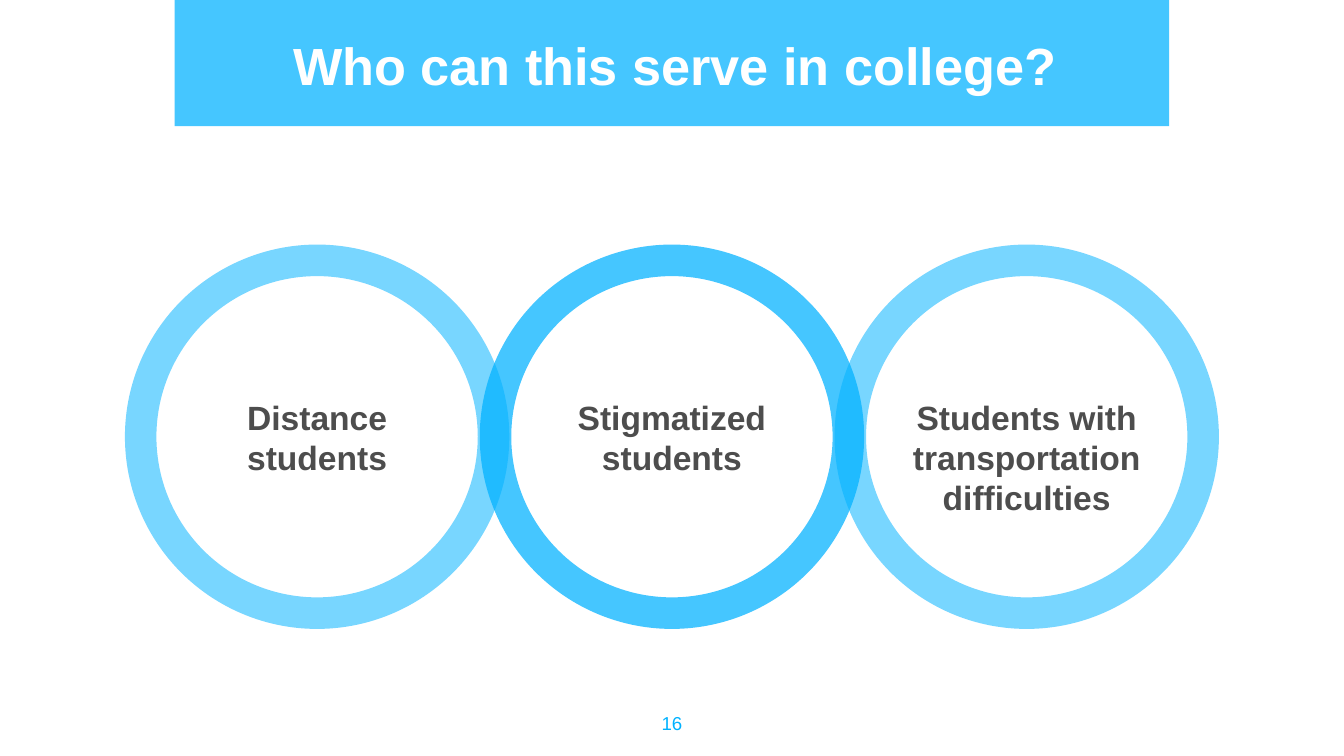
from lxml import etree
from pptx import Presentation
from pptx import util as u
from pptx.dml.color import RGBColor
from pptx.enum import shapes, text
from pptx.oxml.ns import qn

PX = 4572  # EMU in one px, 200 px to the inch
BLUE, WHITE, GREY = "00B2FF", "FFFFFF", "4D4D4D"
RING_SIZE, RING_STEP = 572, 528
INSET = 20


def px(*lengths):
    return [u.Emu(length * PX) for length in lengths]


def color(hex_string):
    return RGBColor.from_string(hex_string)


def add_filled_shape(slide, kind, box, opacity):
    """Add a borderless blue shape with the given opacity in percent."""
    shape = slide.shapes.add_shape(kind, *px(*box))
    shape.shadow.inherit = False
    shape.line.fill.background()
    shape.fill.solid()
    shape.fill.fore_color.rgb = color(BLUE)
    fill_color = shape.fill._xPr.find(qn("a:solidFill"))[0]
    etree.SubElement(fill_color, qn("a:alpha"), val=str(opacity * 1000))
    return shape


def write_text(shape, words, size, hex_string, bold=True, top_inset=INSET,
               anchor=text.MSO_ANCHOR.TOP):
    frame = shape.text_frame
    frame.word_wrap = True
    frame.auto_size = text.MSO_AUTO_SIZE.NONE
    frame.vertical_anchor = anchor
    frame.margin_left, frame.margin_top, frame.margin_right, frame.margin_bottom = px(
        INSET, top_inset, INSET, INSET)
    paragraph = frame.paragraphs[0]
    paragraph.alignment = text.PP_ALIGN.CENTER
    paragraph.line_spacing = 1.0
    paragraph.space_before = u.Pt(0)
    run = paragraph.add_run()
    run.text = words
    run.font.name = "Arial"
    run.font.size = u.Pt(size)
    run.font.bold = bold
    run.font.color.rgb = color(hex_string)


def add_header(slide, left, top, width, height):
    # Banner, moved behind the title placeholder
    banner = add_filled_shape(slide, shapes.MSO_SHAPE.RECTANGLE,
                              (left, top, width, height), 73)
    title = slide.shapes.title
    title._element.addprevious(banner._element)
    title.left, title.top, title.width, title.height = px(left + 4, top + 30, width, 110)
    write_text(title, "Who can this serve in college?", 28, WHITE)


def add_rings(slide, left, top):
    # Middle ring lies at the back; the last label sits lower in its ring
    rings = [
        (1, "Stigmatized students", 73, INSET),
        (2, "Students with transportation difficulties", 53, INSET + 60),
        (0, "Distance students", 53, INSET),
    ]
    for column, label, opacity, top_inset in rings:
        box = (left + column * RING_STEP, top, RING_SIZE, RING_SIZE)
        ring = add_filled_shape(slide, shapes.MSO_SHAPE.DONUT, box, opacity)
        ring.adjustments[0] = 0.082
        write_text(ring, label, 18, GREY, top_inset=top_inset,
                   anchor=text.MSO_ANCHOR.MIDDLE)


def add_page_number(slide, left, top, width, height):
    box = slide.shapes.add_textbox(*px(left, top, width, height))
    write_text(box, "16", 10, BLUE, bold=False, top_inset=INSET + 2)


def main():
    presentation = Presentation()
    presentation.slide_width, presentation.slide_height = px(2000, 1125)
    slide = presentation.slides.add_slide(presentation.slide_layouts[5])
    add_header(slide, 260, 0, 1480, 188)
    add_rings(slide, 186, 364)
    add_page_number(slide, 940, 1038, 120, 86)
    presentation.save("out.pptx")


if __name__ == "__main__":
    main()
